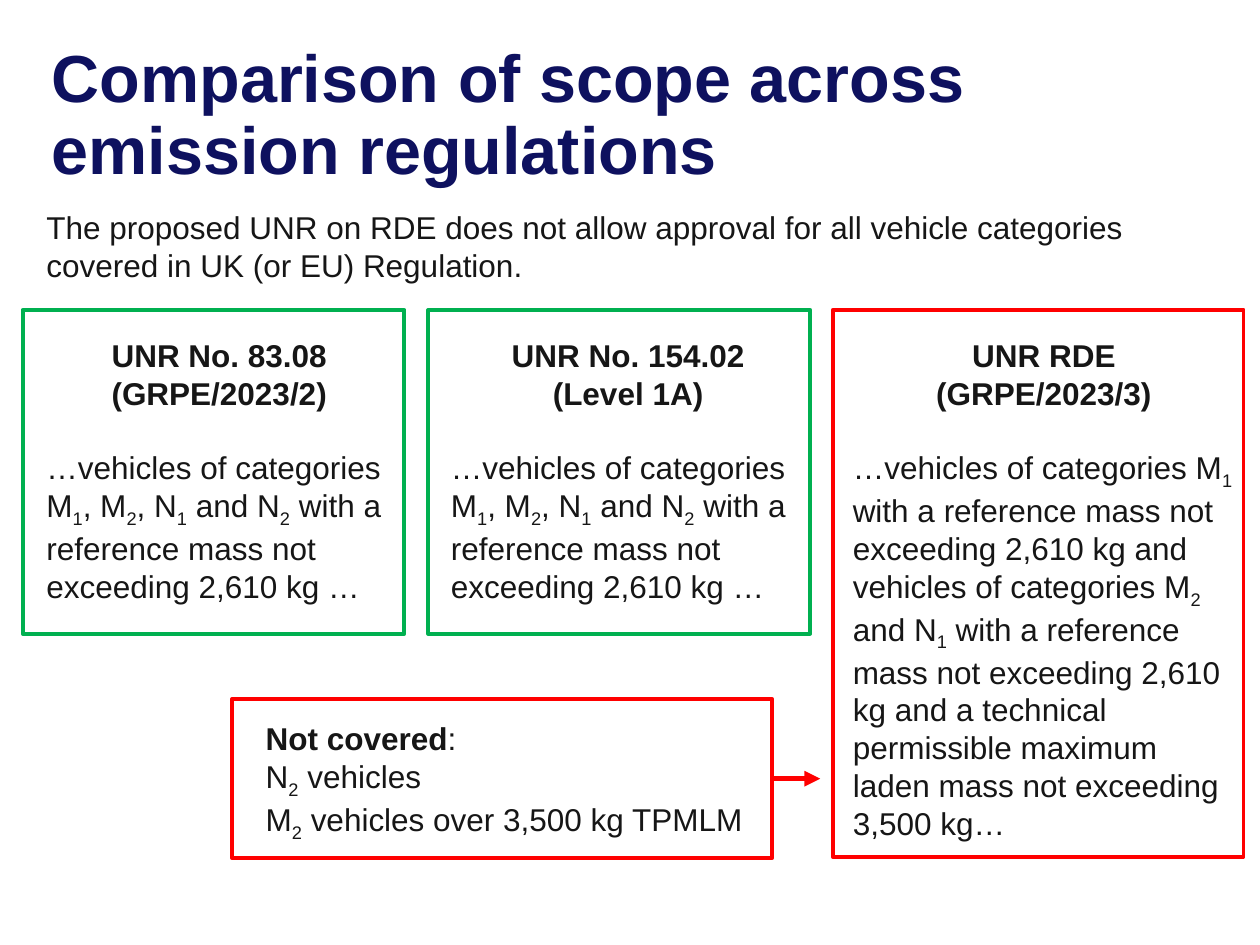
from pptx import Presentation
from pptx.dml.color import RGBColor
from pptx.enum.shapes import MSO_CONNECTOR, MSO_SHAPE
from pptx.enum.text import MSO_ANCHOR, MSO_AUTO_SIZE, PP_ALIGN
from pptx.oxml.ns import qn
from pptx.util import Inches, Pt
from lxml import etree

NAVY = RGBColor(0x0E, 0x11, 0x5F)
INK = RGBColor(0x16, 0x16, 0x16)
GREEN = RGBColor(0x00, 0xB0, 0x50)
RED = RGBColor(0xFF, 0x00, 0x00)
RECT = MSO_SHAPE.RECTANGLE
LINE = MSO_CONNECTOR.STRAIGHT
LEFT, CENTER = PP_ALIGN.LEFT, PP_ALIGN.CENTER
TOP = MSO_ANCHOR.TOP
NO_FIT = MSO_AUTO_SIZE.NONE
FONT = "Arial"

LIMIT = "with a reference mass not exceeding 2,610 kg"
LIGHT = f"…vehicles of categories M_1, M_2, N_1 and N_2 {LIMIT} …"
RDE = (f"…vehicles of categories M_1 {LIMIT} and vehicles of categories M_2 "
       f"and N_1 {LIMIT} and a technical permissible maximum laden mass "
       "not exceeding 3,500 kg…")

# Heading lines, scope, text left and width, frame left, width, height, colour
SCOPES = [
    (["UNR No. 83.08", "(GRPE/2023/2)"], LIGHT,
     0.27, 2.94, 0.18, 3.03, 2.57, GREEN),
    (["UNR No. 154.02", "(Level 1A)"], LIGHT,
     3.48, 3.01, 3.4, 3.03, 2.57, GREEN),
    (["UNR RDE", "(GRPE/2023/3)"], RDE,
     6.67, 3.23, 6.61, 3.26, 4.34, RED),
]


def style(para, size=18, color=INK, bold=False):
    font = para.font
    font.name, font.size, font.bold = FONT, Pt(size), bold
    font.color.rgb = color


def add_runs(para, text):
    """Add text in which the character after each "_" is a subscript."""
    first, *rest = text.split("_")
    para.add_run().text = first
    for part in rest:
        sub = para.add_run()
        sub.text = part[0]
        sub.font._element.set("baseline", "-25000")
        if part[1:]:
            para.add_run().text = part[1:]


def add_text(slide, left, top, width, height, lines):
    """Each line is (text, alignment, bold)."""
    box = slide.shapes.add_textbox(*map(Inches, (left, top, width, height)))
    frame = box.text_frame
    frame.word_wrap = True
    for i, (text, align, bold) in enumerate(lines):
        para = frame.add_paragraph() if i else frame.paragraphs[0]
        para.alignment = align
        style(para, bold=bold)
        add_runs(para, text)
    return frame


def add_frame(slide, left, top, width, height, color):
    rect = slide.shapes.add_shape(
        RECT, *map(Inches, (left, top, width, height)))
    rect.shadow.inherit = False
    rect.fill.background()
    rect.line.color.rgb = color
    rect.line.width = Pt(2.25)
    return rect


def add_arrow(slide, start, x, y):
    """Draw an arrow from the right side of a frame."""
    arrow = slide.shapes.add_connector(
        LINE, Inches(x), Inches(y), Inches(x), Inches(y))
    arrow.begin_connect(start, 3)
    arrow.line.color.rgb = RED
    arrow.line.width = Pt(3)
    etree.SubElement(arrow.line._ln, qn("a:tailEnd"), type="triangle")
    etree.SubElement(arrow._element.spPr, qn("a:effectLst"))


def add_title(slide, text):
    title = slide.shapes.title
    title.left, title.top = Inches(0.41), Inches(0.36)
    title.width, title.height = Inches(7.55), Inches(1.37)
    frame = title.text_frame
    frame.margin_left = frame.margin_right = 0
    frame.margin_top = frame.margin_bottom = 0
    frame.vertical_anchor = TOP
    frame.auto_size = NO_FIT
    frame.word_wrap = True
    para = frame.paragraphs[0]
    para.alignment = LEFT
    para.line_spacing = 0.9
    style(para, 38, NAVY, True)
    para.add_run().text = text


def add_scope(slide, heads, scope, left, width, edge, span, height, color):
    lines = [(head, CENTER, True) for head in heads]
    frame = add_text(slide, left, 2.62, width, height,
                     lines + [(scope, LEFT, False)])
    frame.paragraphs[-1].space_before = Pt(20.7)
    add_frame(slide, edge, 2.46, span, height, color)


def main():
    deck = Presentation()
    deck.slide_width, deck.slide_height = Inches(10), Inches(7.5)
    slide = deck.slides.add_slide(deck.slide_layouts[5])

    # Title and lead sentence
    add_title(slide, "Comparison of scope across emission regulations")
    add_text(slide, 0.27, 1.6, 9.41, 0.71, [(
        "The proposed UNR on RDE does not allow approval for all vehicle "
        "categories covered in UK (or EU) Regulation.", LEFT, False)])

    # Scope of each regulation
    for item in SCOPES:
        add_scope(slide, *item)

    # Gap in coverage, pointing at the RDE column
    gap = add_frame(slide, 1.84, 5.55, 4.29, 1.26, RED)
    note = add_text(slide, 2.01, 5.66, 4.05, 1.31, [
        ("Not covered", LEFT, False),
        ("N_2 vehicles", LEFT, False),
        ("M_2 vehicles over 3,500 kg TPMLM", LEFT, False)])
    lead = note.paragraphs[0]
    lead.runs[0].font.bold = True
    lead.add_run().text = ":"
    add_arrow(slide, gap, 6.51, 6.18)

    deck.save("out.pptx")


if __name__ == "__main__":
    main()
